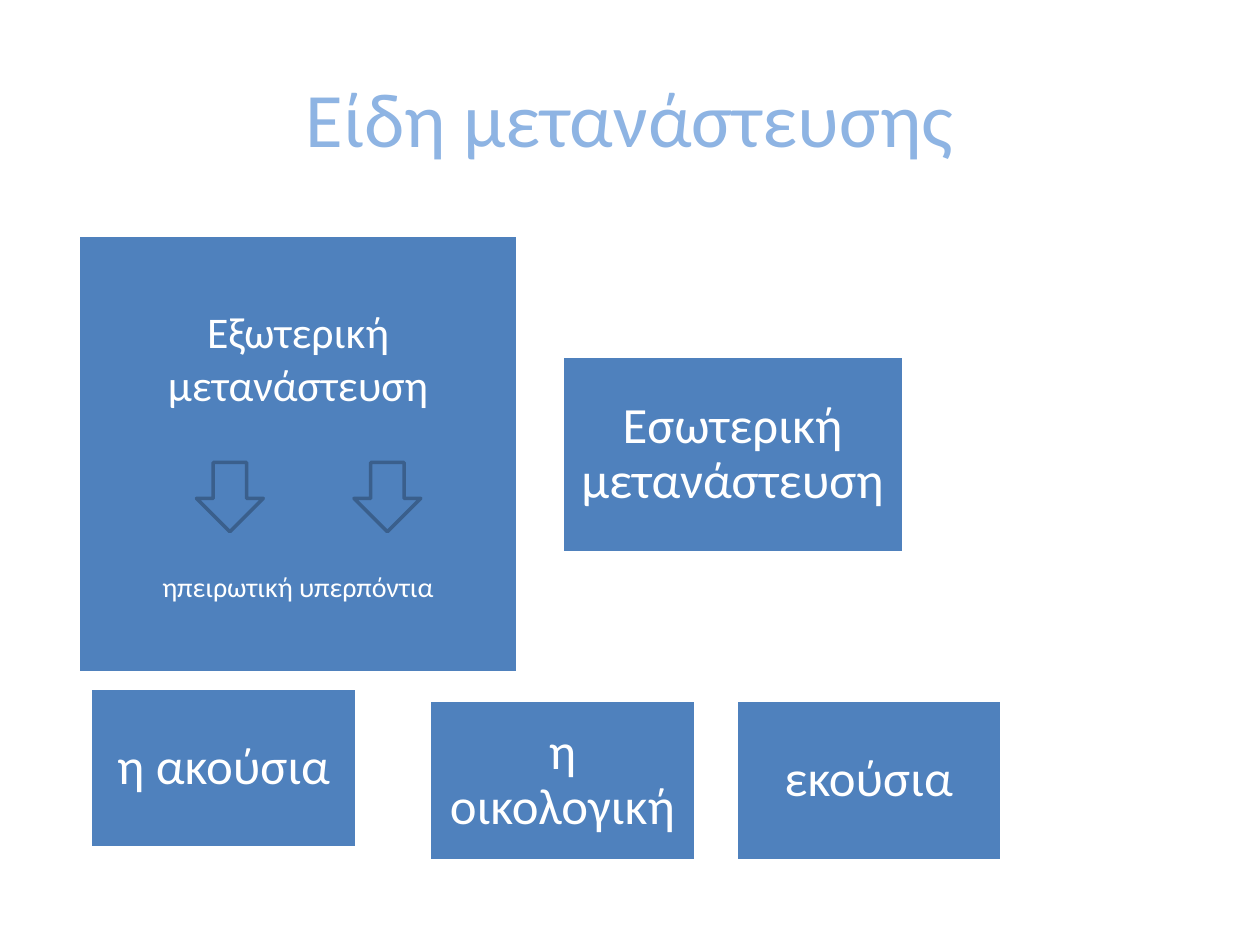
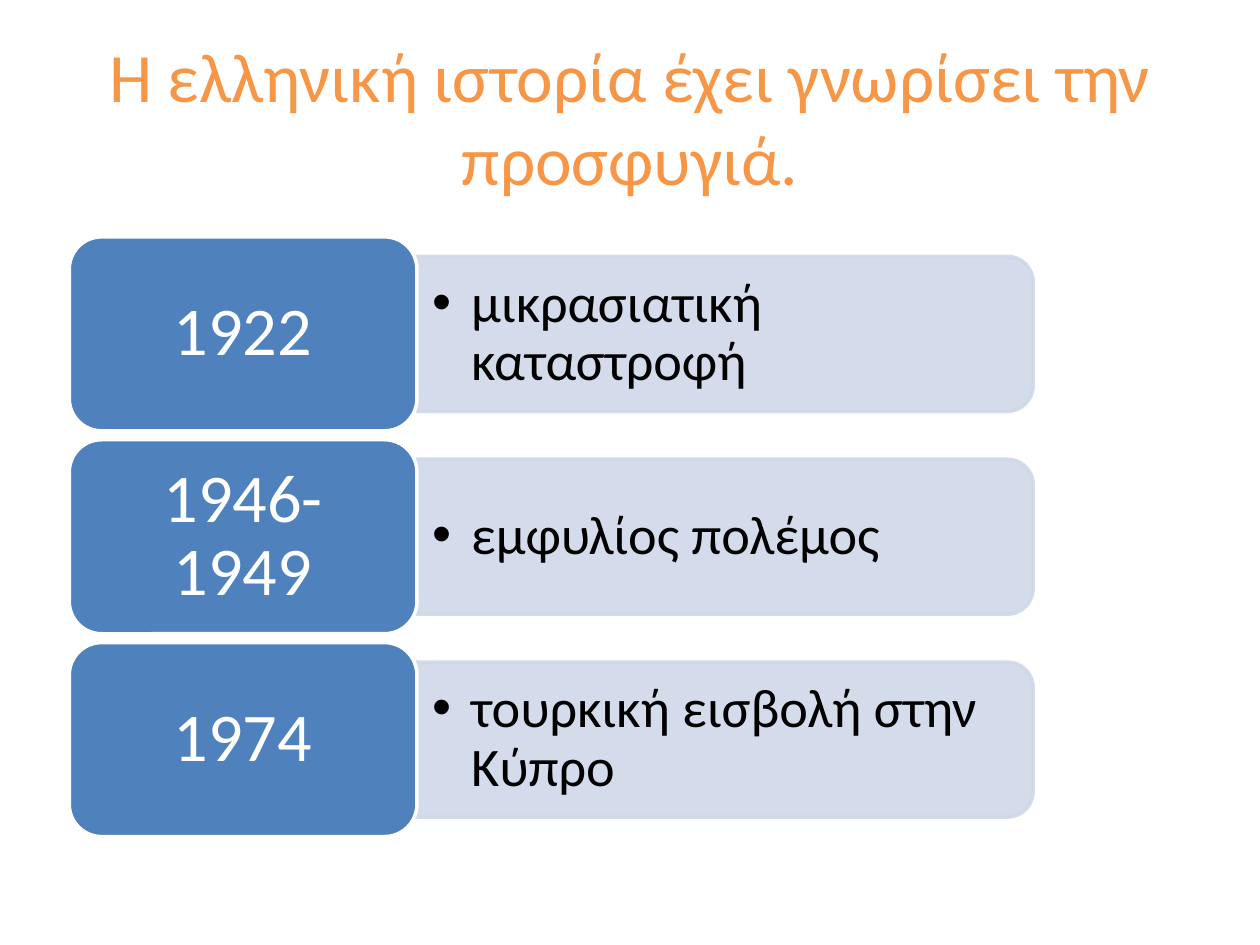
from dataclasses import dataclass

from lxml.etree import SubElement
from pptx import Presentation
from pptx.dml.color import RGBColor
from pptx.enum.shapes import MSO_SHAPE as Preset
from pptx.enum.text import MSO_ANCHOR as Anchor, MSO_AUTO_SIZE as AutoSize, PP_ALIGN as Align
from pptx.oxml.ns import qn
from pptx.util import Inches, Pt

BLUE = RGBColor(0x4F, 0x81, 0xBD)
DARK_BLUE = RGBColor(0x3A, 0x5F, 0x8C)
TITLE_BLUE = RGBColor(0x8E, 0xB4, 0xE3)
TITLE_ORANGE = RGBColor(0xF7, 0x96, 0x46)
PALE_BLUE = RGBColor(0xD0, 0xD8, 0xE8)
WHITE = RGBColor(0xFF, 0xFF, 0xFF)
BLACK = RGBColor(0, 0, 0)
FONT = "Calibri"
TITLE_ONLY = 5


@dataclass
class Box:
    left: float
    top: float
    width: float
    height: float

    def lengths(self) -> tuple:
        return tuple(Inches(value) for value in (self.left, self.top, self.width, self.height))


@dataclass
class Label:
    text: str
    box: Box
    size: float = 29
    inset_x: float = 0.12
    inset_y: float = 0.12
    line_spacing: float = 0.9


@dataclass
class Event:
    years: str
    description: str


MIGRATION_KINDS = [
    Label("Εσωτερική μετανάστευση", Box(4.46, 2.83, 2.71, 1.56)),
    Label("εκούσια", Box(5.84, 5.56, 2.11, 1.27)),
    Label("η ακούσια", Box(0.72, 5.46, 2.11, 1.27)),
    Label("η οικολογική", Box(3.41, 5.56, 2.11, 1.27)),
]
EXTERNAL = Label("Εξωτερική μετανάστευση", Box(0.62, 1.87, 3.49, 3.47), 25, 0.1, 0.1, 1)
ARROW_LEFTS = (1.56, 2.81)

EVENTS = [
    Event("1922", "μικρασιατική καταστροφή"),
    Event("1946-1949", "εμφυλίος πολέμος"),
    Event("1974", "τουρκική εισβολή στην Κύπρο"),
]
FIRST_ROW_TOP = 1.88
ROW_PITCH = 1.61
YEARS_WIDTH, YEARS_HEIGHT = 2.76, 1.54
PANEL_LEFT, PANEL_LENGTH, PANEL_HEIGHT = 3.3, 4.9, 1.23
BULLET_INDENT = Inches(0.31)


def format_paragraph(paragraph, size: float, color: RGBColor, align=Align.CENTER) -> None:
    paragraph.alignment = align
    for run in paragraph.runs:
        run.font.name = FONT
        run.font.size = Pt(size)
        run.font.color.rgb = color


def set_frame(frame, inset_x: float, inset_y: float) -> None:
    frame.word_wrap = True
    frame.vertical_anchor = Anchor.MIDDLE
    frame.margin_left = frame.margin_right = Inches(inset_x)
    frame.margin_top = frame.margin_bottom = Inches(inset_y)


def add_titled_slide(presentation, text: str, size: float, color: RGBColor):
    slide = presentation.slides.add_slide(presentation.slide_layouts[TITLE_ONLY])
    title = slide.shapes.title
    title.left, title.top, title.width, title.height = Box(0.5, 0.3, 9, 1.25).lengths()
    frame = title.text_frame
    frame.text = text
    frame.auto_size = AutoSize.NONE
    frame.vertical_anchor = Anchor.MIDDLE
    format_paragraph(frame.paragraphs[0], size, color)
    return slide


def add_filled_shape(slide, preset, box: Box, fill: RGBColor, line: RGBColor):
    shape = slide.shapes.add_shape(preset, *box.lengths())
    shape.shadow.inherit = False
    shape.fill.solid()
    shape.fill.fore_color.rgb = fill
    shape.line.color.rgb = line
    shape.line.width = Pt(2)
    return shape


def add_label(slide, preset, label: Label):
    shape = add_filled_shape(slide, preset, label.box, BLUE, WHITE)
    frame = shape.text_frame
    set_frame(frame, label.inset_x, label.inset_y)
    frame.text = label.text
    paragraph = frame.paragraphs[0]
    paragraph.line_spacing = label.line_spacing
    format_paragraph(paragraph, label.size, WHITE)
    return shape


def set_opacity(shape, percent: int) -> None:
    for color in shape.element.spPr.iter(qn("a:srgbClr")):
        SubElement(color, qn("a:alpha")).set("val", str(percent * 1000))


def add_bullet(paragraph) -> None:
    properties = paragraph._p.get_or_add_pPr()
    properties.set("marL", str(BULLET_INDENT))
    properties.set("indent", str(-BULLET_INDENT))
    SubElement(properties, qn("a:buFont")).set("typeface", "Arial")
    SubElement(properties, qn("a:buChar")).set("char", "•")


def add_panel(slide, middle: float, description: str) -> None:
    center = PANEL_LEFT + PANEL_LENGTH / 2
    upright = Box(center - PANEL_HEIGHT / 2, middle - PANEL_LENGTH / 2, PANEL_HEIGHT, PANEL_LENGTH)
    panel = add_filled_shape(slide, Preset.ROUND_2_SAME_RECTANGLE, upright, PALE_BLUE, PALE_BLUE)
    panel.rotation = 90
    set_opacity(panel, 90)

    text_height = 1.11
    text_box = Box(PANEL_LEFT, middle - text_height / 2, 4.84, text_height)
    frame = slide.shapes.add_textbox(*text_box.lengths()).text_frame
    set_frame(frame, 0.13, 0.06)
    frame.text = description
    paragraph = frame.paragraphs[0]
    paragraph.line_spacing = 0.9
    format_paragraph(paragraph, 31, BLACK, Align.LEFT)
    add_bullet(paragraph)


def build_kinds_slide(presentation) -> None:
    slide = add_titled_slide(presentation, "Είδη μετανάστευσης", 44, TITLE_BLUE)
    external = add_label(slide, Preset.RECTANGLE, EXTERNAL)
    subtypes = external.text_frame.add_paragraph()
    subtypes.text = "ηπειρωτική υπερπόντια"
    subtypes.space_before = Pt(91.5)
    format_paragraph(subtypes, 16, WHITE)
    for label in MIGRATION_KINDS:
        add_label(slide, Preset.RECTANGLE, label)
    for left in ARROW_LEFTS:
        add_filled_shape(slide, Preset.DOWN_ARROW, Box(left, 3.67, 0.53, 0.55), BLUE, DARK_BLUE)


def build_history_slide(presentation) -> None:
    title = "Η ελληνική ιστορία έχει γνωρίσει την προσφυγιά."
    slide = add_titled_slide(presentation, title, 39.6, TITLE_ORANGE)
    for row, event in enumerate(EVENTS):
        top = FIRST_ROW_TOP + row * ROW_PITCH
        add_panel(slide, top + YEARS_HEIGHT / 2, event.description)
        years_box = Box(0.55, top, YEARS_WIDTH, YEARS_HEIGHT)
        add_label(slide, Preset.ROUNDED_RECTANGLE, Label(event.years, years_box, 39, 0.16, 0.08))


def main() -> None:
    presentation = Presentation()
    presentation.slide_width = Inches(10)
    presentation.slide_height = Inches(7.5)
    build_kinds_slide(presentation)
    build_history_slide(presentation)
    presentation.save("out.pptx")


if __name__ == "__main__":
    main()
